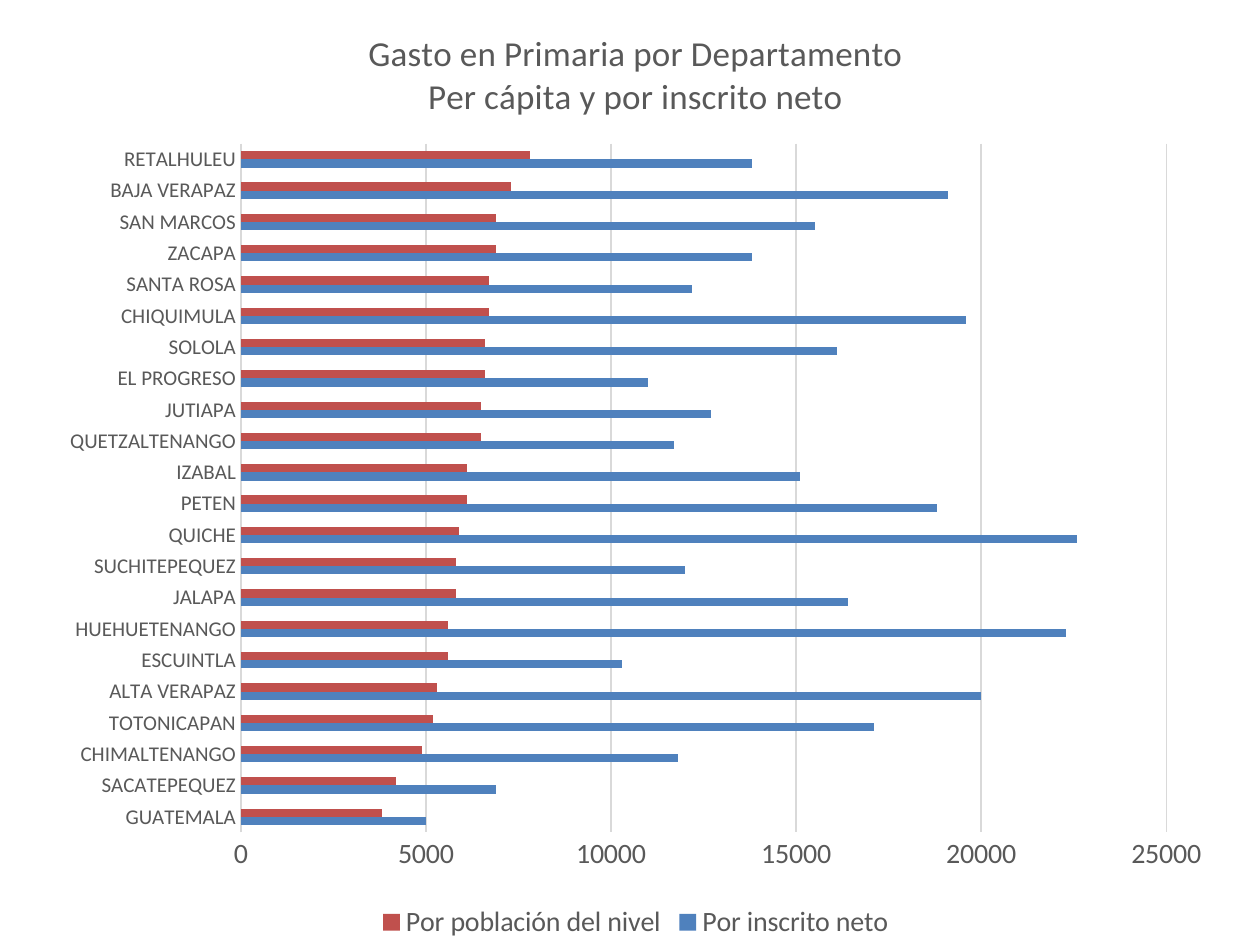
from pptx import Presentation
from pptx.chart.data import CategoryChartData
from pptx.dml.color import RGBColor
from pptx.enum.chart import XL_CHART_TYPE as ChartType
from pptx.enum.chart import XL_LEGEND_POSITION as LegendPosition
from pptx.enum.chart import XL_TICK_MARK as TickMark
from pptx.util import Inches, Pt

BLUE = RGBColor(0x4F, 0x81, 0xBD)
RED = RGBColor(0xC0, 0x50, 0x4D)
TEXT_GRAY = RGBColor(0x59, 0x59, 0x59)
LINE_GRAY = RGBColor(0xD9, 0xD9, 0xD9)
FONT_NAME = "Calibri"

TITLE_LINES = ["Gasto en Primaria por Departamento", "Per cápita y por inscrito neto"]

# Department, spending per net enrolled pupil, spending per person of school age
SPENDING = [
    ("GUATEMALA", 5000, 3800),
    ("SACATEPEQUEZ", 6900, 4200),
    ("CHIMALTENANGO", 11800, 4900),
    ("TOTONICAPAN", 17100, 5200),
    ("ALTA VERAPAZ", 20000, 5300),
    ("ESCUINTLA", 10300, 5600),
    ("HUEHUETENANGO", 22300, 5600),
    ("JALAPA", 16400, 5800),
    ("SUCHITEPEQUEZ", 12000, 5800),
    ("QUICHE", 22600, 5900),
    ("PETEN", 18800, 6100),
    ("IZABAL", 15100, 6100),
    ("QUETZALTENANGO", 11700, 6500),
    ("JUTIAPA", 12700, 6500),
    ("EL PROGRESO", 11000, 6600),
    ("SOLOLA", 16100, 6600),
    ("CHIQUIMULA", 19600, 6700),
    ("SANTA ROSA", 12200, 6700),
    ("ZACAPA", 13800, 6900),
    ("SAN MARCOS", 15500, 6900),
    ("BAJA VERAPAZ", 19100, 7300),
    ("RETALHULEU", 13800, 7800),
]


def style_font(font, size):
    font.name = FONT_NAME
    font.size = Pt(size)
    font.bold = False
    font.color.rgb = TEXT_GRAY


presentation = Presentation()
presentation.slide_width = Inches(10)
presentation.slide_height = Inches(7.5)
slide = presentation.slides.add_slide(presentation.slide_layouts[6])

departments, per_pupil, per_person = zip(*SPENDING)
chart_data = CategoryChartData(number_format="0")
chart_data.categories = departments
chart_data.add_series("Por inscrito neto", per_pupil)
chart_data.add_series("Por población del nivel", per_person)
chart = slide.shapes.add_chart(
    ChartType.BAR_CLUSTERED,
    Inches(0.37), 0, Inches(9.35), presentation.slide_height,
    chart_data,
).chart
style_font(chart.font, 16)

# Title
chart.has_title = True
title_frame = chart.chart_title.text_frame
for index, line in enumerate(TITLE_LINES):
    paragraph = title_frame.add_paragraph() if index else title_frame.paragraphs[0]
    run = paragraph.add_run()
    run.text = line
    style_font(run.font, 20)
chart.chart_title.include_in_layout = False

# Bars
plot = chart.plots[0]
plot.gap_width = 182
plot.overlap = 0
plot.vary_by_categories = False
for series, color in zip(plot.series, (BLUE, RED)):
    series.format.fill.solid()
    series.format.fill.fore_color.rgb = color
    series.invert_if_negative = False

# Axes
for axis, size in ((chart.category_axis, 12), (chart.value_axis, 16)):
    axis.major_tick_mark = TickMark.NONE
    axis.minor_tick_mark = TickMark.NONE
    style_font(axis.tick_labels.font, size)

value_axis = chart.value_axis
value_axis.minimum_scale = 0
value_axis.maximum_scale = 25000
value_axis.major_unit = 5000
value_axis.has_major_gridlines = True
value_axis.format.line.fill.background()
for line in (chart.category_axis.format.line, value_axis.major_gridlines.format.line):
    line.color.rgb = LINE_GRAY
    line.width = Pt(0.75)

# Legend
chart.has_legend = True
chart.legend.position = LegendPosition.BOTTOM
chart.legend.include_in_layout = False
style_font(chart.legend.font, 16)

presentation.save("out.pptx")
